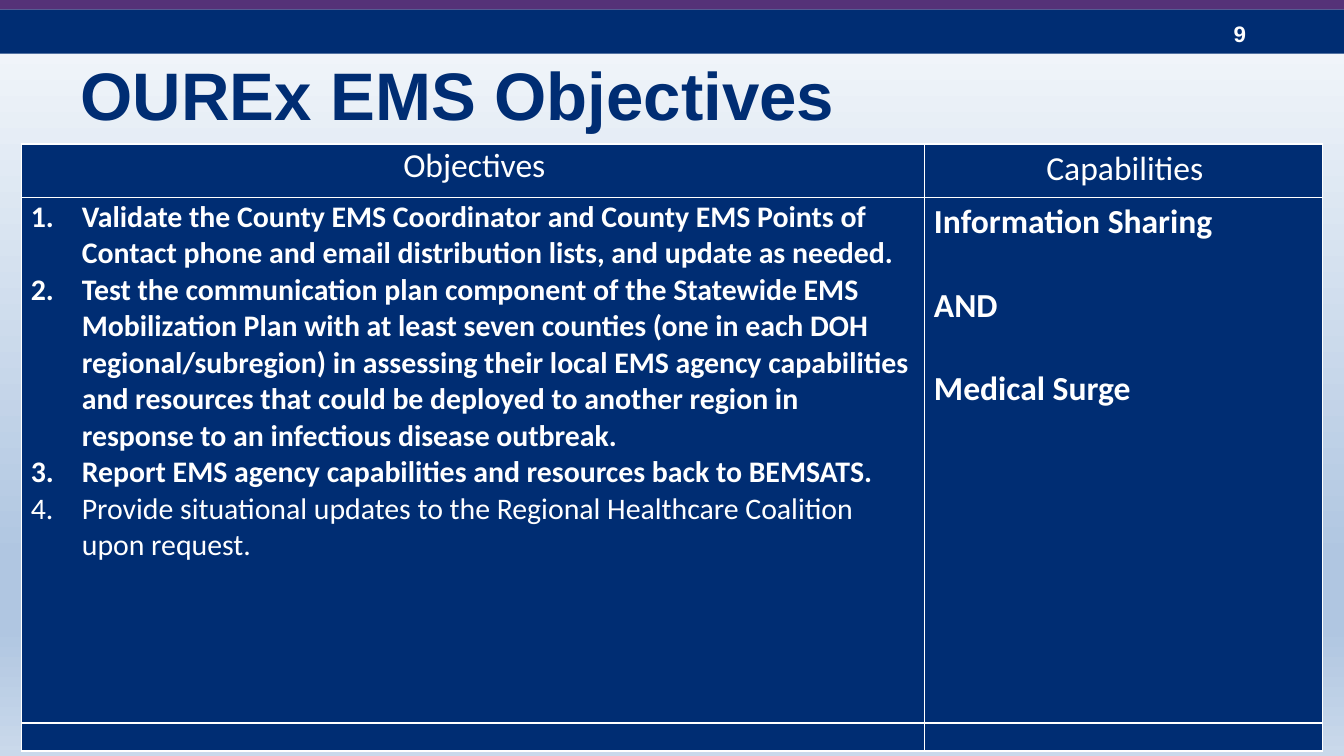
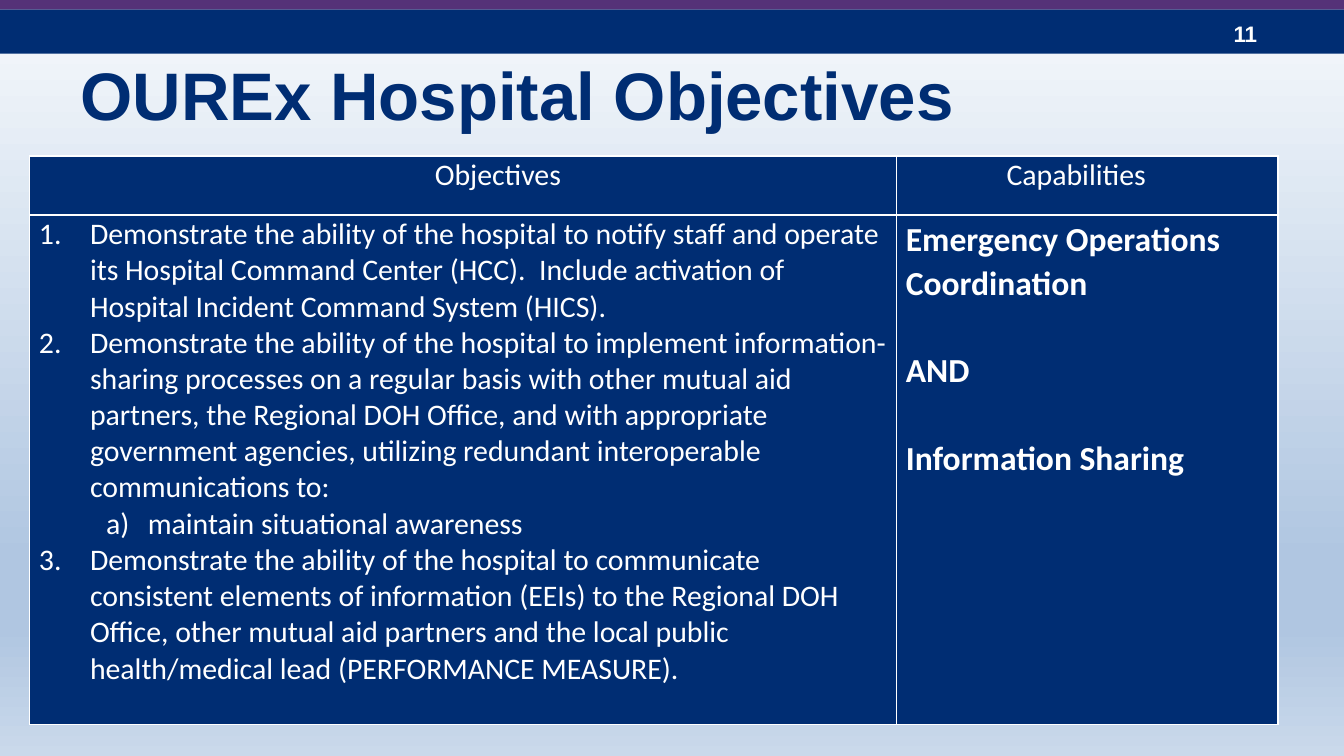
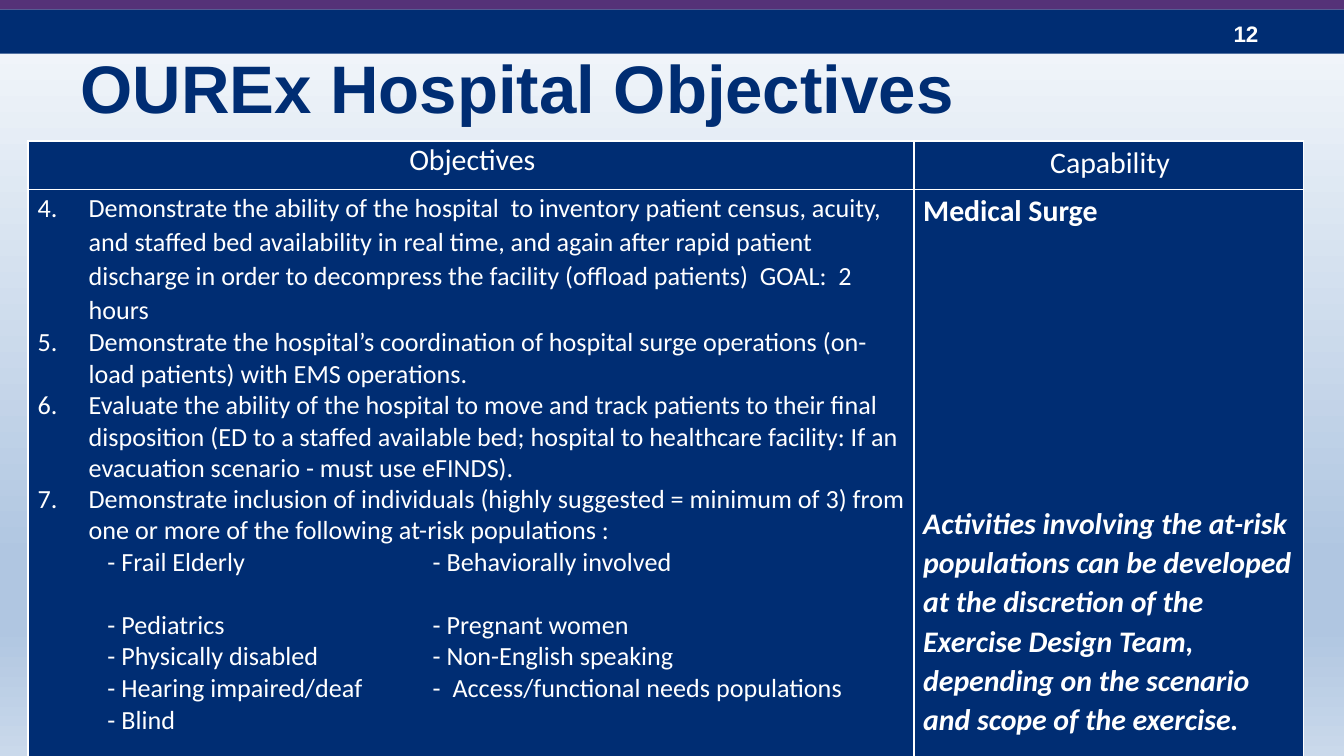
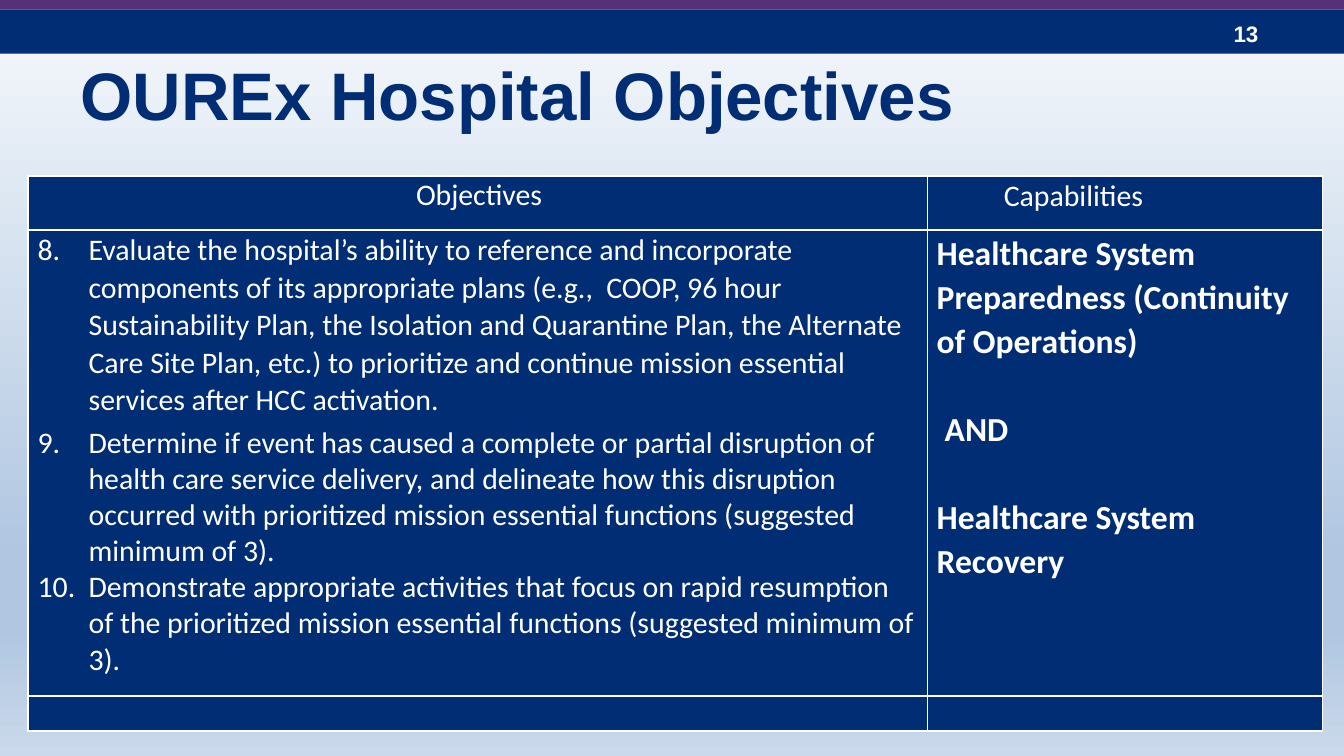
from dataclasses import dataclass

from lxml import etree
from pptx import Presentation
from pptx import util as u
from pptx.dml.color import RGBColor
from pptx.enum import shapes, text
from pptx.oxml.ns import qn

CENTER = text.PP_ALIGN.CENTER
LEFT = text.PP_ALIGN.LEFT


@dataclass(frozen=True)
class Theme:
    navy: str = "002D73"
    purple: str = "553278"
    white: str = "FFFFFF"
    sky: tuple = ((0, "F6F9FC"), (74, "B0C6E1"), (83, "B0C6E1"), (100, "CAD9EB"))
    head: str = "Arial"
    body: str = "Calibri"
    title: int = 36
    page: int = 12
    large: int = 18
    mid: int = 16
    small: int = 14
    tiny: int = 8
    rule: int = 1


T = Theme()


@dataclass
class Para:
    """One paragraph; left, hang and tabs are inches, before and after points."""
    text: str
    size: int = T.mid
    bold: bool = False
    italic: bool = False
    align: int = LEFT
    lines: float = 1.0
    before: float = 0
    after: float = 0
    left: float = 0
    hang: float = 0
    num: str = ""
    start: int = 1
    level: int = 0
    tabs: tuple = ()


def item(words, **more):
    """A numbered objective."""
    return Para(words, **{"left": 0.38, "hang": -0.38, "num": "arabicPeriod", **more})


def skill(words, **more):
    """A bold entry of the capability column."""
    return Para(words, **{"size": T.large, "bold": True, "lines": 1.07, **more})


def group(*names, **more):
    """A line of at-risk groups, each at its own tab stop."""
    words = "".join("\t" + name for name in names)
    return Para(words, size=T.small, lines=0.98, after=0.2, tabs=(0.52, 2.94), **more)


def node(parent, tag, **attrs):
    child = etree.SubElement(parent, qn(tag))
    for key, value in attrs.items():
        child.set(key, str(value))
    return child


def style(font, name, size, color, bold=False, italic=False):
    font.name, font.size = name, u.Pt(size)
    font.bold, font.italic = bold, italic
    font.color.rgb = RGBColor.from_string(color)


def paint(slide):
    """Fill the background with the vertical gradient."""
    fill = slide.background.fill
    fill.gradient()
    fill.gradient_angle = 270
    stops = slide.element.find(".//" + qn("a:gsLst"))
    for old in list(stops):
        stops.remove(old)
    for pos, color in T.sky:
        node(node(stops, "a:gs", pos=pos * 1000), "a:srgbClr", val=color)


def band(slide, top, height, color):
    bar = slide.shapes.add_shape(shapes.MSO_SHAPE.RECTANGLE, 0, u.Inches(top),
                                 u.Inches(10), u.Inches(height))
    bar.shadow.inherit = False
    bar.fill.solid()
    bar.fill.fore_color.rgb = RGBColor.from_string(color)
    bar.line.fill.background()


def label(slide, words, box, size, color, anchor):
    frame = slide.shapes.add_textbox(*map(u.Inches, box)).text_frame
    frame.word_wrap = True
    frame.vertical_anchor = anchor
    para = frame.paragraphs[0]
    para.text = words
    style(para.font, T.head, size, color, bold=True)


def write(para, spec):
    para.text = spec.text
    para.alignment = spec.align
    para.level = spec.level
    para.line_spacing = spec.lines
    para.space_before = u.Pt(spec.before)
    para.space_after = u.Pt(spec.after)
    props = para._p.get_or_add_pPr()
    if spec.left:
        props.set("marL", str(u.Inches(spec.left)))
        props.set("indent", str(u.Inches(spec.hang)))
    if spec.num:
        node(node(props, "a:buClr"), "a:srgbClr", val=T.white)
        node(props, "a:buAutoNum", type=spec.num, startAt=spec.start)
    else:
        node(props, "a:buNone")
    if spec.tabs:
        stops = node(props, "a:tabLst")
        for pos in spec.tabs:
            node(stops, "a:tab", pos=u.Inches(pos), algn="l")
    style(para.font, T.body, spec.size, T.white, spec.bold, spec.italic)


def dress(cell):
    """Set insets, borders and fill of a cell."""
    cell.margin_left, cell.margin_right = u.Inches(0.07), u.Inches(0.05)
    cell.margin_top, cell.margin_bottom = u.Inches(0.01), 0
    props = cell._tc.get_or_add_tcPr()
    for side in "LRTB":
        line = node(props, "a:ln" + side, w=u.Pt(T.rule))
        node(node(line, "a:solidFill"), "a:srgbClr", val=T.white)
    cell.fill.solid()
    cell.fill.fore_color.rgb = RGBColor.from_string(T.navy)


def grid(slide, left, top, cols, rows, cells):
    """Build the table; rows beyond those in cells stay empty."""
    box = map(u.Inches, (left, top, sum(cols), sum(rows)))
    table = slide.shapes.add_table(len(rows), len(cols), *box).table
    table.first_row = table.horz_banding = False
    for col, width in zip(table.columns, cols):
        col.width = u.Inches(width)
    for row, height in zip(table.rows, rows):
        row.height = u.Inches(height)
    for r in range(len(rows)):
        for c in range(len(cols)):
            cell = table.cell(r, c)
            dress(cell)
            frame = cell.text_frame
            if r >= len(cells):
                end = frame.paragraphs[0]._p.get_or_add_endParaRPr()
                end.set("sz", str(T.tiny * 100))
                continue
            for i, spec in enumerate(cells[r][c]):
                write(frame.add_paragraph() if i else frame.paragraphs[0], spec)


def page(deck, number, title, box=(0.5, 0.23, 9, 0.94)):
    """Add a slide with its background, bands, number and title."""
    slide = deck.slides.add_slide(deck.slide_layouts[6])
    paint(slide)
    band(slide, 0.07, 0.33, T.navy)
    label(slide, str(number), (9.08, 0.1, 0.75, 0.3), T.page, T.white,
          text.MSO_ANCHOR.TOP)
    band(slide, -0.02, 0.09, T.purple)
    label(slide, title, box, T.title, T.navy, text.MSO_ANCHOR.MIDDLE)
    return slide


def ems(deck):
    slide = page(deck, 9, "OUREx EMS Objectives")
    head = [
        [Para("Objectives", T.large, align=CENTER)],
        [Para("Capabilities", T.large, align=CENTER, lines=1.07)],
    ]
    goals = [
        item("Validate the County EMS Coordinator and County EMS Points of Contact "
             "phone and email distribution lists, and update as needed.", bold=True),
        item("Test the communication plan component of the Statewide EMS "
             "Mobilization Plan with at least seven counties (one in each DOH "
             "regional/subregion) in assessing their local EMS agency capabilities "
             "and resources that could be deployed to another region in  response "
             "to an infectious disease outbreak.", bold=True),
        item("Report EMS agency capabilities and resources back to BEMSATS.",
             bold=True),
        item("Provide situational updates to the Regional Healthcare Coalition "
             "upon request."),
    ]
    skills = [skill("Information Sharing"), skill("AND", before=21.3),
              skill("Medical Surge", before=21.3)]
    grid(slide, 0.16, 1.07, (6.72, 2.96), (0.4, 3.91, 0.21),
         [head, [goals, skills]])


def notify(deck):
    slide = page(deck, 11, "OUREx Hospital Objectives")
    tight = {"lines": 0.99, "after": 0.1}
    head = [
        [Para("Objectives", align=CENTER, left=0.5, **tight)],
        [Para("Capabilities", left=0.75, **tight)],
    ]
    goals = [
        item("Demonstrate the ability of the hospital to notify staff and operate "
             "its Hospital Command Center (HCC).  Include activation of Hospital "
             "Incident Command System (HICS).", **tight),
        item("Demonstrate the ability of the hospital to implement "
             "information-sharing processes on a regular basis with other mutual "
             "aid partners, the Regional DOH Office, and with appropriate "
             "government agencies, utilizing redundant interoperable "
             "communications to:", **tight),
        item("maintain situational awareness", left=0.81, hang=-0.31,
             num="alphaLcParenR", level=1, **tight),
        item("Demonstrate the ability of the hospital to communicate consistent "
             "elements of information (EEIs) to the Regional DOH Office, other "
             "mutual aid partners and the local public health/medical lead "
             "(PERFORMANCE MEASURE).", **tight),
    ]
    skills = [skill("Emergency Operations Coordination"),
              skill("AND", before=23.5),
              skill("Information Sharing", before=23.5)]
    grid(slide, 0.22, 1.16, (6.45, 2.84), (0.44, 3.79), [head, [goals, skills]])


def surge(deck):
    slide = page(deck, 12, "OUREx Hospital Objectives", (0.5, 0, 9, 1.29))
    tight = {"lines": 0.98, "after": 0.2}
    count = {"size": T.small, "start": 4}
    head = [
        [Para("Objectives", align=CENTER, **tight)],
        [Para("Capability", align=CENTER, lines=1.07)],
    ]
    goals = [
        item("Demonstrate the ability of the hospital  to inventory patient census, "
             "acuity, and staffed bed availability in real time, and again after "
             "rapid patient discharge in order to decompress the facility (offload "
             "patients)  GOAL:  2 hours", lines=1.07, **count),
        item("Demonstrate the hospital’s coordination of hospital surge operations "
             "(on-load patients) with EMS operations.", lines=0.99, after=0.1,
             **count),
        item("Evaluate the ability of the hospital to move and track patients to "
             "their final disposition (ED to a staffed available bed; hospital to "
             "healthcare facility: If an evacuation scenario - must use eFINDS).",
             **tight, **count),
        item("Demonstrate inclusion of individuals (highly suggested = minimum of "
             "3) from one or more of the following at-risk populations :",
             **tight, **count),
        group("- Frail Elderly", "- Behaviorally involved"),
        group("- Pediatrics", "- Pregnant women", before=16.8),
        group("- Physically disabled", "- Non-English speaking"),
        group("- Hearing impaired/deaf", "-  Access/functional needs populations"),
        group("- Blind"),
    ]
    skills = [
        skill("Medical Surge", size=T.mid),
        skill("Activities involving the at-risk populations can be developed at "
              "the discretion of the Exercise Design Team, depending on the "
              "scenario and scope of the exercise.", size=T.mid, italic=True,
              before=146.8),
    ]
    grid(slide, 0.21, 1.05, (6.59, 2.9), (0.36, 4.22), [head, [goals, skills]])


def recover(deck):
    slide = page(deck, 13, "OUREx Hospital Objectives")
    tight = {"lines": 0.99, "after": 0.1, "start": 8}
    head = [
        [Para("Objectives", align=CENTER, lines=0.99, after=0.1)],
        [Para("Capabilities", left=0.5, lines=1.03, after=3)],
    ]
    goals = [
        item("Evaluate the hospital’s ability to reference and incorporate "
             "components of its appropriate plans (e.g.,  COOP, 96 hour "
             "Sustainability Plan, the Isolation and Quarantine Plan, the Alternate "
             "Care Site Plan, etc.) to prioritize and continue mission essential "
             "services after HCC activation.", lines=1.03, after=3, start=8),
        item("Determine if event has caused a complete or partial disruption of "
             "health care service delivery, and delineate how this disruption "
             "occurred with prioritized mission essential functions (suggested "
             "minimum of 3).", **tight),
        item("Demonstrate appropriate activities that focus on rapid resumption of "
             "the prioritized mission essential functions (suggested minimum of "
             "3).", **tight),
    ]
    skills = [
        skill("Healthcare System Preparedness (Continuity of Operations)"),
        skill("AND", before=23.5, left=0.06),
        skill("Healthcare System Recovery", before=23.5),
    ]
    grid(slide, 0.21, 1.31, (6.69, 2.94), (0.4, 3.47, 0.26),
         [head, [goals, skills]])


def main():
    deck = Presentation()
    deck.slide_width, deck.slide_height = u.Inches(10), u.Inches(10 * 9 / 16)
    for build in (ems, notify, surge, recover):
        build(deck)
    deck.save("out.pptx")


if __name__ == "__main__":
    main()
